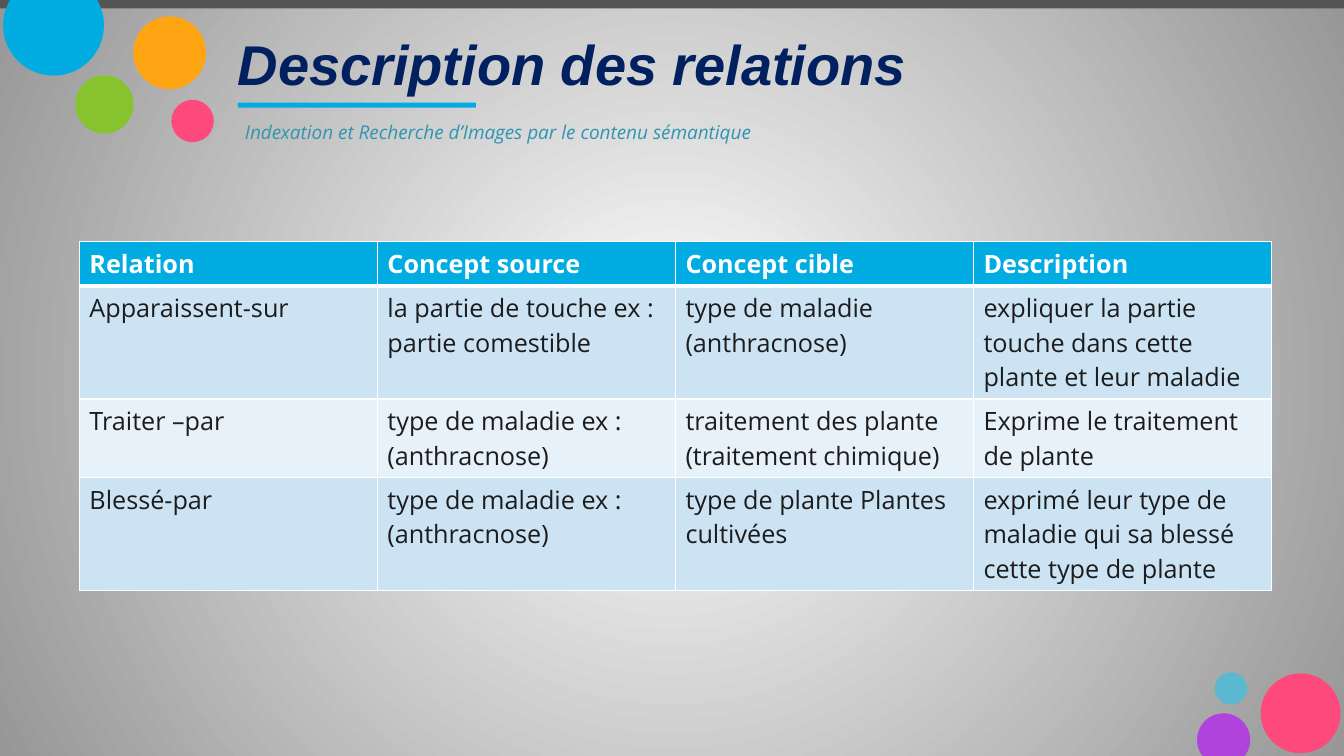
from itertools import pairwise
from math import cos, radians, sin, tan

from lxml.etree import SubElement
from pptx import Presentation
from pptx.dml.color import RGBColor
from pptx.enum.shapes import MSO_SHAPE
from pptx.enum.text import MSO_ANCHOR
from pptx.oxml import parse_xml
from pptx.oxml.ns import nsdecls, qn
from pptx.util import Pt

WHITE = RGBColor(0xFF, 0xFF, 0xFF)
GREY = RGBColor(0x97, 0x97, 0x97)
DARK_GREY = RGBColor(0x54, 0x54, 0x54)
TEXT = RGBColor(0x1C, 0x1C, 0x1C)
NAVY = RGBColor(0x00, 0x20, 0x60)
TEAL = RGBColor(0x31, 0x95, 0xB0)
BLUE = RGBColor(0x00, 0xAC, 0xE2)
LIGHT_BLUE = RGBColor(0x5B, 0xB8, 0xD1)
PINK = RGBColor(0xFD, 0x49, 0x7C)
GREEN = RGBColor(0x87, 0xC3, 0x2F)
ORANGE = RGBColor(0xFF, 0xA5, 0x13)
PURPLE = RGBColor(0xB1, 0x43, 0xDD)
BAND_DARK = RGBColor(0xCC, 0xE3, 0xF4)
BAND_LIGHT = RGBColor(0xE7, 0xF1, 0xFA)

SLIDE_WIDTH, SLIDE_HEIGHT = 960, 540

# left, top, diameter, colour
CIRCLES = [
    (122.4, 71.3, 30.3, PINK),
    (53.8, 53.8, 41.6, GREEN),
    (95.2, 11.7, 52, ORANGE),
    (867.7, 480.2, 23.2, LIGHT_BLUE),
    (900.5, 481, 57, PINK),
]

ROW_HEIGHTS = [31.7, 80.7, 56.2, 80.7]
COLUMN_WIDTH = 212.9
RELATIONS = [
    ["Relation", "Concept source", "Concept cible", "Description"],
    ["Apparaissent-sur", "la partie de touche ex : partie comestible",
     "type de maladie (anthracnose)",
     "expliquer la partie touche dans cette plante et leur maladie"],
    ["Traiter –par", "type de maladie ex : (anthracnose)",
     "traitement des plante (traitement chimique)",
     "Exprime le traitement de plante"],
    ["Blessé-par", "type de maladie ex : (anthracnose)",
     "type de plante Plantes cultivées",
     "exprimé leur type de maladie qui sa blessé cette type de plante"],
]


def set_background(slide):
    """Fill the background with a gradient from a white centre to grey."""
    fill = slide.background.fill
    fill.gradient()
    for stop, position, color in zip(fill.gradient_stops, (0, 1), (WHITE, GREY)):
        stop.position = position
        stop.color.rgb = color
    gradient = slide.element.find(".//" + qn("a:gradFill"))
    gradient.remove(gradient.find(qn("a:lin")))
    circle = SubElement(gradient, qn("a:path"), {"path": "circle"})
    SubElement(circle, qn("a:fillToRect"), dict.fromkeys("ltrb", "50000"))


def paint(shape, color):
    shape.shadow.inherit = False
    shape.fill.solid()
    shape.fill.fore_color.rgb = color
    shape.line.fill.background()


def add_preset(slide, kind, left, top, width, height, color):
    shape = slide.shapes.add_shape(kind, Pt(left), Pt(top), Pt(width), Pt(height))
    paint(shape, color)


def add_cut_circle(slide, center_x, center_y, radius, angles, color):
    """Draw a circle cut straight by the slide edge, one curve between two angles."""
    def place(angle, handle=0):
        """Return the point at an angle, moved along the tangent by handle."""
        x, y = cos(radians(angle)), sin(radians(angle))
        return (Pt(center_x + radius * (x - handle * y)),
                Pt(center_y + radius * (y + handle * x)))

    points = []
    for start, end in pairwise(angles):
        handle = 4 / 3 * tan(radians(end - start) / 4)
        points += [place(start, handle), place(end, -handle), place(end)]
    builder = slide.shapes.build_freeform(*place(angles[0]))
    builder.add_line_segments(points, close=True)
    shape = builder.convert_to_shape()
    paint(shape, color)

    lines = list(shape.element.iter(qn("a:lnTo")))
    for first in range(0, len(points), 3):
        curve = parse_xml(f'<a:cubicBezTo {nsdecls("a")}/>')
        lines[first].addprevious(curve)
        for line in lines[first:first + 3]:
            curve.append(line[0])
            line.getparent().remove(line)


def add_text(slide, left, top, width, height, text, anchor, color, **font_values):
    box = slide.shapes.add_textbox(Pt(left), Pt(top), Pt(width), Pt(height))
    frame = box.text_frame
    frame_values = {
        "word_wrap": True, "vertical_anchor": anchor,
        "margin_left": Pt(8.6), "margin_right": Pt(8.6),
        "margin_top": Pt(4.3), "margin_bottom": Pt(4.3),
    }
    for name, value in frame_values.items():
        setattr(frame, name, value)
    add_run(frame, text, color, **font_values)


def add_run(frame, text, color, **font_values):
    run = frame.paragraphs[0].add_run()
    run.text = text
    run.font.color.rgb = color
    for name, value in font_values.items():
        setattr(run.font, name, value)


def set_borders(cell, top, bottom):
    """Give the cell white borders; top and bottom are widths in points."""
    properties = cell._tc.get_or_add_tcPr()
    widths = {"lnL": 1, "lnR": 1, "lnT": top, "lnB": bottom}
    for index, (side, width) in enumerate(widths.items()):
        properties.insert(index, parse_xml(
            f'<a:{side} {nsdecls("a")} w="{Pt(width)}"><a:solidFill>'
            f'<a:srgbClr val="{WHITE}"/></a:solidFill></a:{side}>'))


def add_relation_table(slide):
    columns = len(RELATIONS[0])
    table = slide.shapes.add_table(
        len(RELATIONS), columns, Pt(56.7), Pt(172.6),
        Pt(COLUMN_WIDTH * columns), Pt(sum(ROW_HEIGHTS))).table
    table.horz_banding = False
    for column in table.columns:
        column.width = Pt(COLUMN_WIDTH)
    for row_index, texts in enumerate(RELATIONS):
        table.rows[row_index].height = Pt(ROW_HEIGHTS[row_index])
        is_header = row_index == 0
        band = BAND_DARK if row_index % 2 else BAND_LIGHT
        for column_index, text in enumerate(texts):
            cell = table.cell(row_index, column_index)
            cell.fill.solid()
            cell.fill.fore_color.rgb = BLUE if is_header else band
            set_borders(cell, 3 if row_index == 1 else 1, 3 if is_header else 1)
            add_run(cell.text_frame, text, WHITE if is_header else TEXT,
                    name="Open Sans", size=Pt(18), bold=is_header)


def main():
    presentation = Presentation()
    presentation.slide_width = Pt(SLIDE_WIDTH)
    presentation.slide_height = Pt(SLIDE_HEIGHT)
    slide = presentation.slides.add_slide(presentation.slide_layouts[6])
    set_background(slide)

    add_preset(slide, MSO_SHAPE.RECTANGLE, 0, 0, SLIDE_WIDTH, 6, DARK_GREY)
    add_cut_circle(slide, 38.3, 18, 36, [-30, 0, 90, 180, 210], BLUE)
    for left, top, diameter, color in CIRCLES:
        add_preset(slide, MSO_SHAPE.OVAL, left, top, diameter, diameter, color)
    add_cut_circle(slide, 874, 528.5, 19, [143, 180, 270, 360, 397], PURPLE)
    add_preset(slide, MSO_SHAPE.RECTANGLE, 170, 73.4, 170, 3.6, BLUE)

    add_text(slide, 161.3, 13, 753, 63.4, "Description des relations",
             MSO_ANCHOR.MIDDLE, NAVY, name="Arial", size=Pt(40), bold=True, italic=True)
    add_text(slide, 166.3, 81.4, 752.4, 26.6,
             "Indexation et Recherche d’Images par le contenu sémantique",
             MSO_ANCHOR.TOP, TEAL, name="Open Sans", size=Pt(13.6), italic=True)
    add_relation_table(slide)
    presentation.save("out.pptx")


if __name__ == "__main__":
    main()
